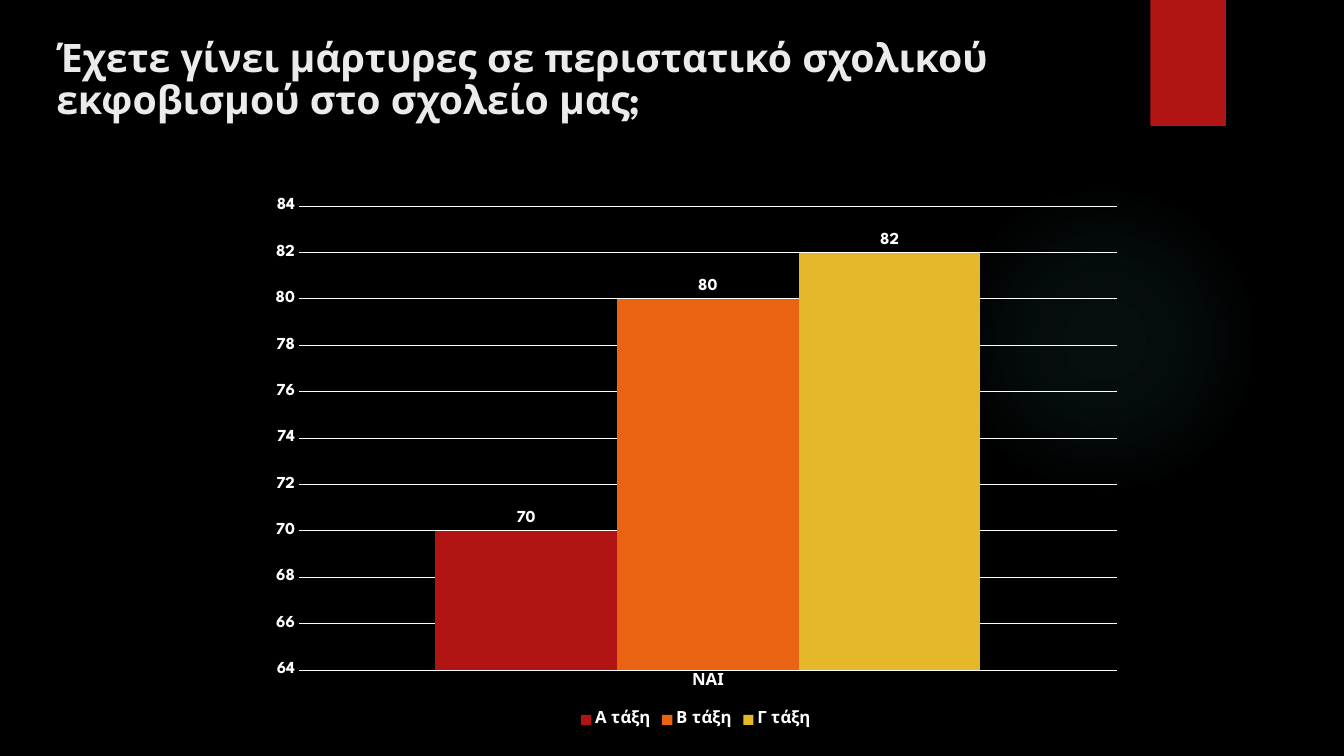
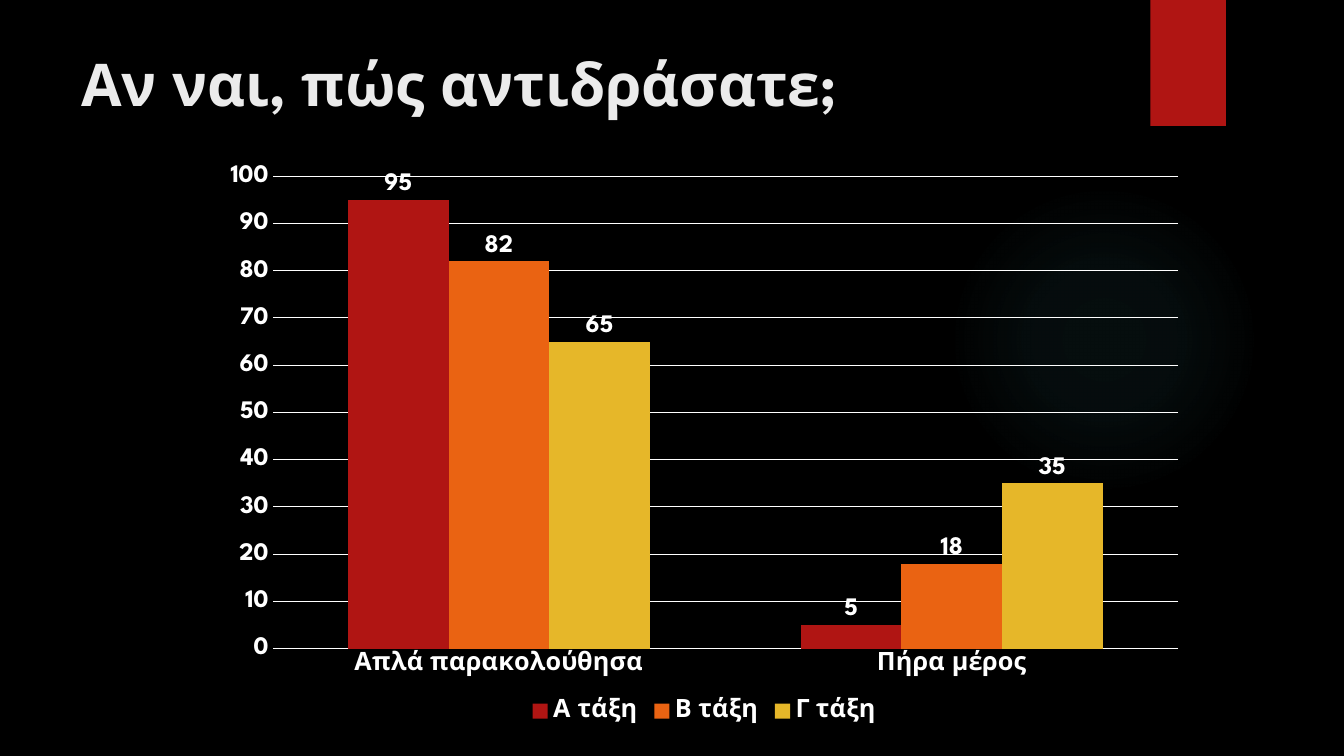
from lxml import etree
from pptx import Presentation
from pptx.chart.data import CategoryChartData
from pptx.dml.color import RGBColor
from pptx.enum.chart import XL_CHART_TYPE as ChartType
from pptx.enum.chart import XL_LABEL_POSITION as LabelPosition
from pptx.enum.chart import XL_LEGEND_POSITION as LegendPosition
from pptx.enum.chart import XL_TICK_MARK as TickMark
from pptx.enum.shapes import MSO_SHAPE as Shape
from pptx.enum.text import MSO_ANCHOR as Anchor
from pptx.enum.text import PP_ALIGN as Align
from pptx.oxml import parse_xml
from pptx.oxml.ns import nsdecls
from pptx.util import Inches, Pt

COLORS = {
    "background": "000000",
    "title": "EBEBEB",
    "text": "FFFFFF",
    "glow": "50B9C1",
    "tab": "B01513",
}
# Each school class has its own column colour
CLASSES = {"Α τάξη": "B01513", "Β τάξη": "EA6312", "Γ τάξη": "E6B729"}
GLOW_STOPS = [(0, 7), (36, 6), (69, 0)]  # position and opacity in percent
FONT = "League Spartan"


class Deck:
    """Holds the shared style and the slide being built."""

    def __init__(self):
        self.presentation = Presentation()
        self.presentation.slide_width = Inches(13.33)
        self.presentation.slide_height = Inches(7.5)
        self.slide = None

    def color(self, name):
        return RGBColor.from_string(COLORS[name])

    def style_font(self, font, size, color="text"):
        font.name = FONT
        font.size = Pt(size)
        font.bold = True
        font.color.rgb = self.color(color)

    def add_slide(self):
        self.slide = self.presentation.slides.add_slide(self.presentation.slide_layouts[6])
        fill = self.slide.background.fill
        fill.solid()
        fill.fore_color.rgb = self.color("background")
        self.add_glow()
        self.add_tab()

    def add_plain_shape(self, kind, left, top, width, height, color):
        shape = self.slide.shapes.add_shape(
            kind, Inches(left), Inches(top), Inches(width), Inches(height))
        shape.shadow.inherit = False
        shape.fill.solid()
        shape.fill.fore_color.rgb = self.color(color)
        shape.line.fill.background()
        return shape

    def add_glow(self):
        glow = self.add_plain_shape(Shape.OVAL, 9.41, 1.83, 3.08, 3.08, "glow")
        # Radial gradient that fades to transparent
        stops = "".join(
            f'<a:gs pos="{position * 1000}"><a:srgbClr val="{COLORS["glow"]}">'
            f'<a:alpha val="{opacity * 1000}"/></a:srgbClr></a:gs>'
            for position, opacity in GLOW_STOPS)
        gradient = parse_xml(
            f'<a:gradFill {nsdecls("a")}><a:gsLst>{stops}</a:gsLst><a:path path="circle">'
            '<a:fillToRect l="50000" t="50000" r="50000" b="50000"/></a:path></a:gradFill>')
        properties = glow.element.spPr
        for child in properties:
            if etree.QName(child).localname == "solidFill":
                properties.replace(child, gradient)

    def add_tab(self):
        self.add_plain_shape(Shape.RECTANGLE, 11.41, 0, 0.75, 1.25, "tab")

    def add_title(self, text, left, top, width, size):
        box = self.slide.shapes.add_textbox(
            Inches(left), Inches(top), Inches(width), Inches(1.53))
        frame = box.text_frame
        frame.word_wrap = True
        frame.vertical_anchor = Anchor.TOP
        paragraph = frame.paragraphs[0]
        paragraph.text = text
        paragraph.alignment = Align.LEFT
        paragraph.line_spacing = 0.9
        self.style_font(paragraph.font, size, "title")

    def add_column_chart(self, categories, values, left, top, width, height, size, scale):
        data = CategoryChartData()
        data.categories = categories
        for name, numbers in zip(CLASSES, values):
            data.add_series(name, numbers)
        chart = self.slide.shapes.add_chart(
            ChartType.COLUMN_CLUSTERED, Inches(left), Inches(top),
            Inches(width), Inches(height), data).chart
        chart.has_title = False
        self.style_font(chart.font, size)

        # Legend
        chart.has_legend = True
        chart.legend.position = LegendPosition.BOTTOM
        chart.legend.include_in_layout = False
        self.style_font(chart.legend.font, size)

        # Axes
        for axis in (chart.category_axis, chart.value_axis):
            axis.major_tick_mark = TickMark.NONE
            axis.minor_tick_mark = TickMark.NONE
            axis.format.line.fill.background()
            self.style_font(axis.tick_labels.font, size)
        value_axis = chart.value_axis
        value_axis.minimum_scale, value_axis.maximum_scale, value_axis.major_unit = scale
        value_axis.has_major_gridlines = True
        grid = value_axis.major_gridlines.format.line
        grid.width = Pt(0.75)
        grid.color.rgb = self.color("text")

        # Columns
        plot = chart.plots[0]
        plot.gap_width = 150
        plot.overlap = 0
        plot.vary_by_categories = False
        for series, color in zip(plot.series, CLASSES.values()):
            series.format.fill.solid()
            series.format.fill.fore_color.rgb = RGBColor.from_string(color)
            labels = series.data_labels
            labels.show_value = True
            labels.position = LabelPosition.OUTSIDE_END
            self.style_font(labels.font, size)


def main():
    deck = Deck()

    # Witnesses of bullying
    deck.add_slide()
    deck.add_title("Έχετε γίνει μάρτυρες σε περιστατικό σχολικού εκφοβισμού στο σχολείο μας;",
                   0.46, 0.33, 10.98, 28)
    deck.add_column_chart(["ΝΑΙ"], [[70], [80], [82]],
                          2.56, 1.86, 8.69, 5.4, size=12, scale=(64, 84, 2))

    # Reactions of the witnesses
    deck.add_slide()
    deck.add_title("Αν ναι, πώς αντιδράσατε;", 0.71, 0.5, 10.29, 42)
    deck.add_column_chart(["Απλά παρακολούθησα", "Πήρα μέρος"],
                          [[95, 5], [82, 18], [65, 35]],
                          2.09, 1.52, 9.79, 5.7, size=18, scale=(0, 100, 10))

    deck.presentation.save("out.pptx")


if __name__ == "__main__":
    main()
